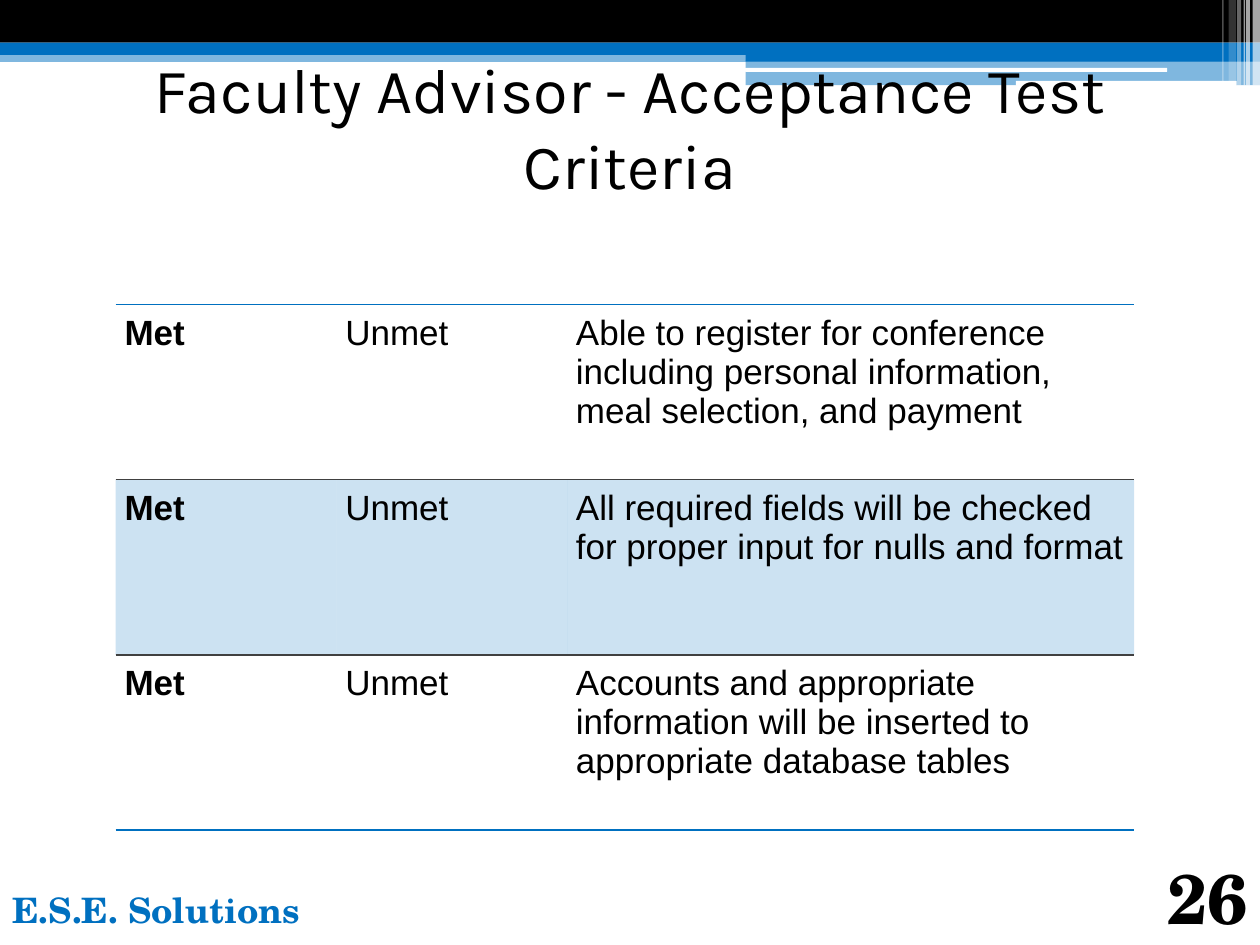
from dataclasses import dataclass
from typing import Optional

from lxml import etree
from pptx import Presentation
from pptx.dml import color
from pptx.enum import shapes, text
from pptx.oxml import ns
from pptx.util import Cm, Pt


@dataclass(frozen=True)
class Theme:
    blue: str = "0070C0"
    black: str = "000000"
    white: str = "FFFFFF"
    rule: str = "404040"
    title_font: str = "Karla"
    table_font: str = "Arial"
    footer_font: str = "TeX Gyre Schola"
    title_size: int = 36
    body_size: int = 20
    number_size: int = 40
    band_opacity: int = 20


@dataclass(frozen=True)
class Bar:
    left: float
    top: float
    width: float
    height: float
    fill: str
    opacity: int = 100
    rounded: bool = False


@dataclass(frozen=True)
class Label:
    left: float
    top: float
    width: float
    height: float
    words: str
    size: int
    fill: str
    align: text.PP_ALIGN
    anchor: text.MSO_ANCHOR


@dataclass(frozen=True)
class Criterion:
    description: str
    top_rule: Optional[str] = None
    bottom_rule: Optional[str] = None
    banded: bool = False


THEME = Theme()
BARS = [
    Bar(0, 1.02, 25.4, 0.23, THEME.blue, 50),
    Bar(0, 0, 25.4, 0.86, THEME.black),
    Bar(0, 0.86, 25.4, 0.25, THEME.blue),
    Bar(15.03, 0.99, 10.37, 0.25, THEME.blue),
    Bar(15.03, 1.22, 10.37, 0.5, THEME.blue, 50),
    Bar(15.02, 1.37, 8.51, 0.08, THEME.white, rounded=True),
    Bar(20.48, 1.63, 4.45, 0.1, THEME.white, rounded=True),
    Bar(25.25, 0, 0.15, 1.73, THEME.white, 65),
    Bar(25.12, 0, 0.08, 1.73, THEME.white, 65),
    Bar(25.07, 0, 0.03, 1.73, THEME.white, 60),
    Bar(24.94, 0, 0.08, 1.73, THEME.white, 40),
    Bar(24.77, 0, 0.15, 1.63, THEME.white, 20),
    Bar(24.64, 0, 0.03, 1.63, THEME.white, 30),
]
LABELS = [
    Label(0, 17.78, 6.35, 1.27, "E.S.E. Solutions", THEME.body_size,
          THEME.blue, text.PP_ALIGN.LEFT, text.MSO_ANCHOR.TOP),
    Label(22.86, 17.53, 2.54, 1.52, "26", THEME.number_size,
          THEME.black, text.PP_ALIGN.RIGHT, text.MSO_ANCHOR.BOTTOM),
]
CRITERIA = [
    Criterion("Able to register for conference including personal information, "
              "meal selection, and payment", top_rule=THEME.blue, bottom_rule=THEME.rule),
    Criterion("All required fields will be checked for proper input for nulls and format",
              top_rule=THEME.rule, banded=True),
    Criterion("Accounts and appropriate information will be inserted to "
              "appropriate database tables", bottom_rule=THEME.blue),
]
COLUMN_WIDTHS = (4.45, 4.65, 11.43)
ROW_HEIGHT = 3.53
CELL_MARGIN = 0.18
NO_GRID_STYLE = "{2D5ABB26-0587-4C30-8999-92F81FD0307C}"


def paint(fill, rgb: str, opacity: int = 100) -> None:
    fill.solid()
    fill.fore_color.rgb = color.RGBColor.from_string(rgb)
    if opacity < 100:
        for clr in fill._xPr.iter(ns.qn("a:srgbClr")):
            etree.SubElement(clr, ns.qn("a:alpha"), val=str(opacity * 1000))


def style(p, font: str, size: int, rgb: str, bold: bool = False) -> None:
    p.font.name = font
    p.font.size = Pt(size)
    p.font.bold = bold
    p.font.color.rgb = color.RGBColor.from_string(rgb)


def draw_bar(s, bar: Bar) -> None:
    kind = shapes.MSO_SHAPE.ROUNDED_RECTANGLE if bar.rounded else shapes.MSO_SHAPE.RECTANGLE
    sp = s.shapes.add_shape(kind, Cm(bar.left), Cm(bar.top), Cm(bar.width), Cm(bar.height))
    sp.shadow.inherit = False
    sp.line.fill.background()
    paint(sp.fill, bar.fill, bar.opacity)


def draw_title(s, words: str) -> None:
    sp = s.shapes.title
    sp.left, sp.top, sp.width, sp.height = Cm(1.27), Cm(1.27), Cm(22.86), Cm(2.54)
    tf = sp.text_frame
    tf.text = words
    tf.auto_size = text.MSO_AUTO_SIZE.NONE
    tf.vertical_anchor = text.MSO_ANCHOR.MIDDLE
    p = tf.paragraphs[0]
    p.alignment = text.PP_ALIGN.CENTER
    style(p, THEME.title_font, THEME.title_size, THEME.black)
    sp.element.getparent().append(sp.element)


def draw_label(s, label: Label) -> None:
    sp = s.shapes.add_textbox(Cm(label.left), Cm(label.top), Cm(label.width), Cm(label.height))
    tf = sp.text_frame
    tf.word_wrap = True
    tf.vertical_anchor = label.anchor
    tf.text = label.words
    p = tf.paragraphs[0]
    p.alignment = label.align
    style(p, THEME.footer_font, label.size, label.fill, bold=True)


def rule_cell(cell, criterion: Criterion) -> None:
    tc_pr = cell._tc.get_or_add_tcPr()
    edges = (("a:lnT", criterion.top_rule), ("a:lnB", criterion.bottom_rule))
    lines = []
    for tag, rgb in edges:
        if rgb:
            ln = etree.Element(ns.qn(tag), w=str(Pt(1)))
            solid = etree.SubElement(ln, ns.qn("a:solidFill"))
            etree.SubElement(solid, ns.qn("a:srgbClr"), val=rgb)
            lines.append(ln)
    for position, ln in enumerate(lines):
        tc_pr.insert(position, ln)


def draw_table(s, criteria: list[Criterion]) -> None:
    frame = s.shapes.add_table(len(criteria), len(COLUMN_WIDTHS), Cm(2.33), Cm(6.14),
                               Cm(sum(COLUMN_WIDTHS)), Cm(ROW_HEIGHT * len(criteria)))
    table = frame.table
    table.first_row = table.horz_banding = False
    table._tbl.tblPr.find(ns.qn("a:tableStyleId")).text = NO_GRID_STYLE
    for column, width in zip(table.columns, COLUMN_WIDTHS):
        column.width = Cm(width)
    for row, criterion in zip(table.rows, criteria):
        row.height = Cm(ROW_HEIGHT)
        for i, words in enumerate(("Met", "Unmet", criterion.description)):
            cell = row.cells[i]
            cell.text = words
            cell.margin_left = cell.margin_right = Cm(CELL_MARGIN)
            cell.margin_top = cell.margin_bottom = Cm(CELL_MARGIN)
            style(cell.text_frame.paragraphs[0], THEME.table_font, THEME.body_size,
                  THEME.black, bold=i == 0)
            if criterion.banded:
                paint(cell.fill, THEME.blue, THEME.band_opacity)
            else:
                cell.fill.background()
            rule_cell(cell, criterion)


def main() -> None:
    prs = Presentation()
    prs.slide_width, prs.slide_height = Cm(25.4), Cm(19.05)
    s = prs.slides.add_slide(prs.slide_layouts[5])
    paint(s.background.fill, THEME.white)
    for bar in BARS:
        draw_bar(s, bar)
    draw_title(s, "Faculty Advisor - Acceptance Test Criteria")
    for label in LABELS:
        draw_label(s, label)
    draw_table(s, CRITERIA)
    prs.save("out.pptx")


if __name__ == "__main__":
    main()
